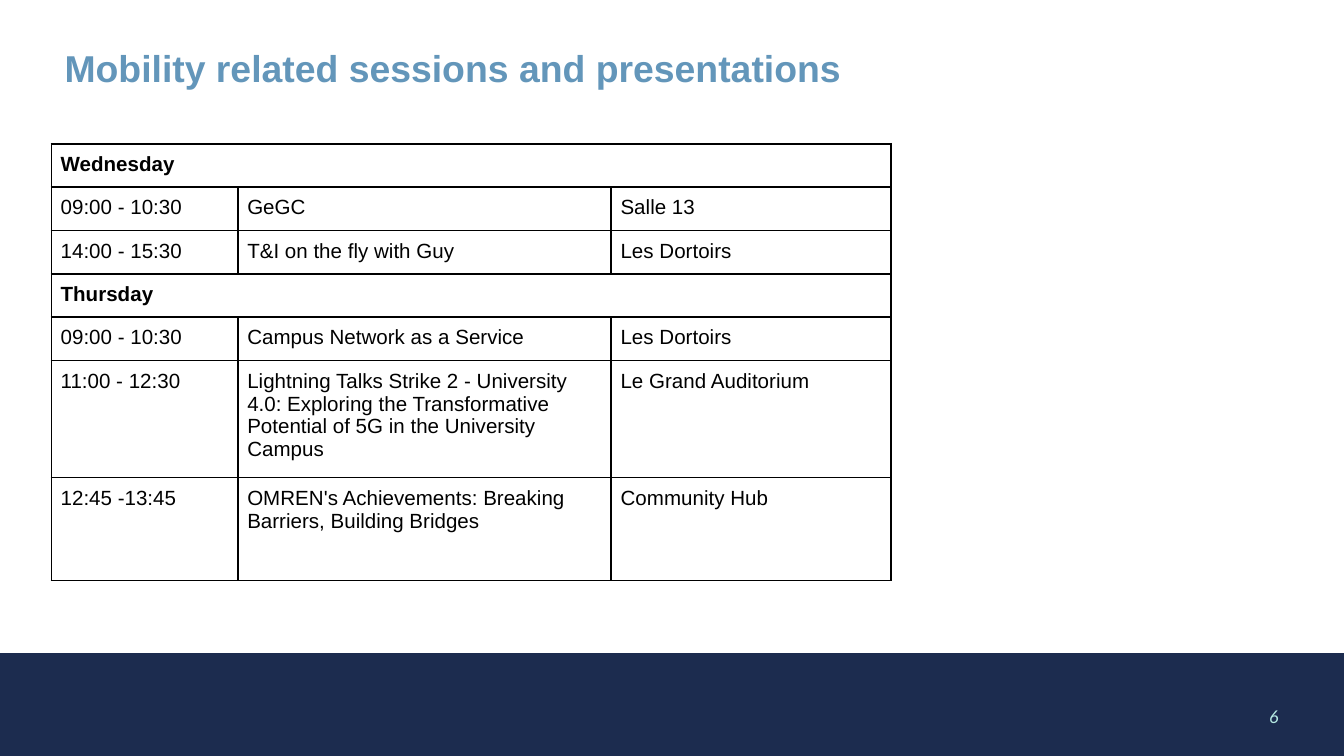
from lxml import etree
from pptx import Presentation
from pptx.dml.color import RGBColor
from pptx.enum.shapes import MSO_SHAPE
from pptx.enum.text import MSO_ANCHOR, PP_ALIGN
from pptx.oxml.ns import qn
from pptx.util import Pt

RECTANGLE = MSO_SHAPE.RECTANGLE
MIDDLE = MSO_ANCHOR.MIDDLE
LEFT, RIGHT = PP_ALIGN.LEFT, PP_ALIGN.RIGHT

# Content
TITLE = "Mobility related sessions and presentations"
PAGE_NUMBER = "6"
SCHEDULE = [
    ("Wednesday", [
        ("09:00 - 10:30", "GeGC", "Salle 13"),
        ("14:00 - 15:30", "T&I on the fly with Guy", "Les Dortoirs"),
    ]),
    ("Thursday", [
        ("09:00 - 10:30", "Campus Network as a Service", "Les Dortoirs"),
        ("11:00 - 12:30",
         "Lightning Talks Strike 2 - University 4.0: Exploring the "
         "Transformative Potential of 5G in the University Campus",
         "Le Grand Auditorium"),
        ("12:45 -13:45",
         "OMREN's Achievements: Breaking Barriers, Building Bridges",
         "Community Hub"),
    ]),
]

# Style and measures in points
COLORS = {"navy": "1C2C4F", "mint": "B4E9E2", "blue": "6396BA", "black": "000000"}
SLIDE_WIDTH, SLIDE_HEIGHT = 720, 405
FOOTER_TOP = 350
MARGIN = 27.5
TABLE_TOP = 77
COLUMN_WIDTHS = [100, 200, 150]
ROW_HEIGHT = 22.2
TALL_ROWS = {5: 59, 6: 55.2}
CELL_INSET = 5
BORDER_WIDTH = 1


def color(name):
    return RGBColor.from_string(COLORS[name])


def style(paragraph, size, color_name, font="Arial", bold=False, italic=False):
    paragraph.font.name = font
    paragraph.font.size = Pt(size)
    paragraph.font.bold = bold
    paragraph.font.italic = italic
    paragraph.font.color.rgb = color(color_name)


def add_label(slide, text, left, top, width, height, align):
    box = slide.shapes.add_textbox(Pt(left), Pt(top), Pt(width), Pt(height))
    frame = box.text_frame
    frame.word_wrap = True
    frame.vertical_anchor = MIDDLE
    paragraph = frame.paragraphs[0]
    paragraph.text = text
    paragraph.alignment = align
    return paragraph


def add_borders(cell):
    properties = cell._tc.get_or_add_tcPr()
    for index, side in enumerate(("lnL", "lnR", "lnT", "lnB")):
        line = etree.Element(qn(f"a:{side}"), w=str(Pt(BORDER_WIDTH)))
        fill = etree.SubElement(line, qn("a:solidFill"))
        etree.SubElement(fill, qn("a:srgbClr"), val=COLORS["black"])
        properties.insert(index, line)


def add_schedule(slide):
    rows = []
    for day, sessions in SCHEDULE:
        rows.append((day, "", ""))
        rows.extend(sessions)
    heights = [TALL_ROWS.get(index, ROW_HEIGHT) for index in range(len(rows))]
    table = slide.shapes.add_table(
        len(rows), len(COLUMN_WIDTHS), Pt(MARGIN), Pt(TABLE_TOP),
        Pt(sum(COLUMN_WIDTHS)), Pt(sum(heights))).table
    table.first_row = table.horz_banding = False
    for column, width in zip(table.columns, COLUMN_WIDTHS):
        column.width = Pt(width)
    for row_index, (values, height) in enumerate(zip(rows, heights)):
        table.rows[row_index].height = Pt(height)
        is_day = not values[1]
        for column_index, value in enumerate(values):
            cell = table.cell(row_index, column_index)
            cell.margin_left = cell.margin_right = Pt(CELL_INSET)
            cell.margin_top = cell.margin_bottom = Pt(CELL_INSET)
            cell.fill.background()
            add_borders(cell)
            paragraph = cell.text_frame.paragraphs[0]
            paragraph.text = value
            style(paragraph, 11, "black", bold=is_day)
        if is_day:
            table.cell(row_index, 0).merge(table.cell(row_index, len(values) - 1))


presentation = Presentation()
presentation.slide_width = Pt(SLIDE_WIDTH)
presentation.slide_height = Pt(SLIDE_HEIGHT)
slide = presentation.slides.add_slide(presentation.slide_layouts[6])

# Footer band and page number
footer = slide.shapes.add_shape(
    RECTANGLE, 0, Pt(FOOTER_TOP), Pt(SLIDE_WIDTH), Pt(SLIDE_HEIGHT - FOOTER_TOP))
footer.shadow.inherit = False
footer.fill.solid()
footer.fill.fore_color.rgb = color("navy")
footer.line.fill.background()
page_number = add_label(slide, PAGE_NUMBER, 644.5, 373, 47.5, 21.5, RIGHT)
style(page_number, 10, "mint", font="Calibri", italic=True)

# Title
title = add_label(slide, TITLE, MARGIN, 10, SLIDE_WIDTH - 2 * MARGIN, 55, LEFT)
title.line_spacing = 0.9
style(title, 20, "blue", bold=True)

# Session table
add_schedule(slide)

presentation.save("out.pptx")
